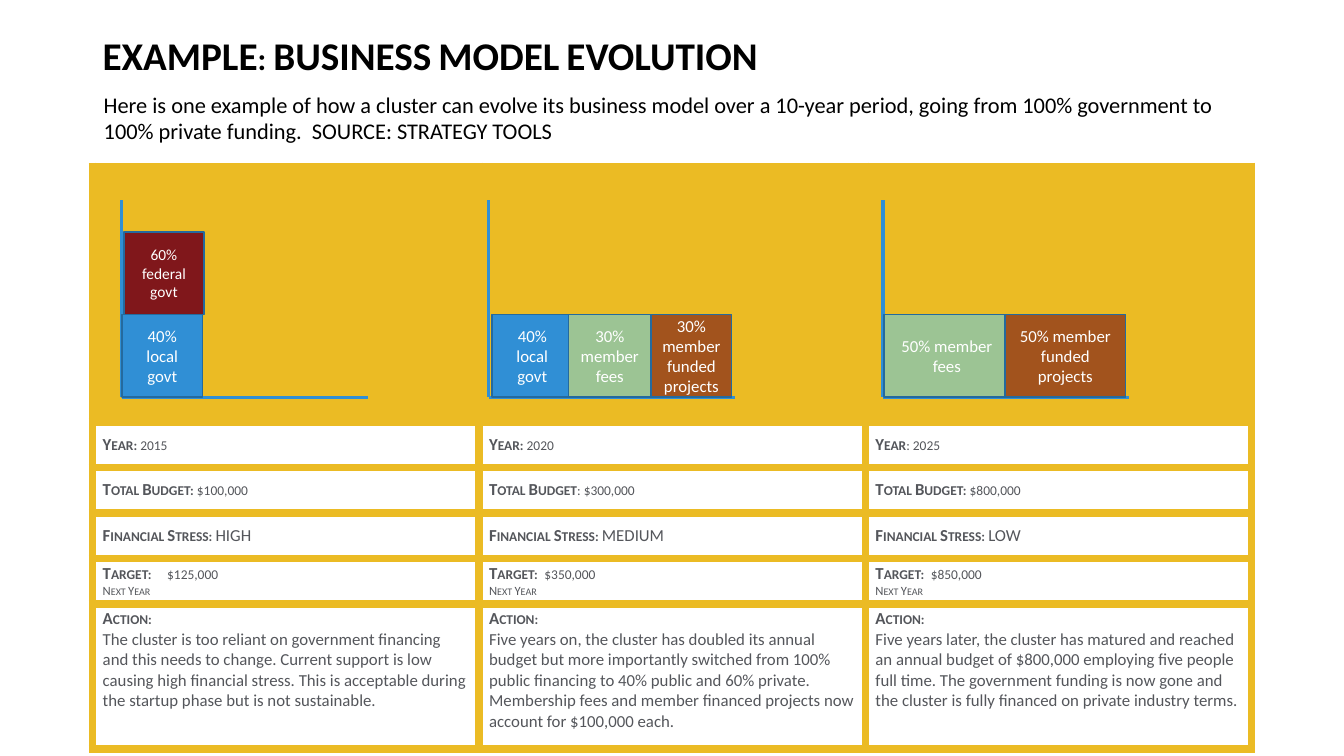
from lxml import etree
from pptx import Presentation
from pptx.dml.color import RGBColor
from pptx.enum.shapes import MSO_CONNECTOR, MSO_SHAPE
from pptx.enum.text import MSO_ANCHOR, PP_ALIGN
from pptx.oxml import parse_xml
from pptx.oxml.ns import nsdecls, qn
from pptx.util import Pt

STRAIGHT = MSO_CONNECTOR.STRAIGHT
RECTANGLE = MSO_SHAPE.RECTANGLE
MIDDLE, TOP = MSO_ANCHOR.MIDDLE, MSO_ANCHOR.TOP
CENTER = PP_ALIGN.CENTER

BLACK = RGBColor(0, 0, 0)
WHITE = RGBColor(0xFF, 0xFF, 0xFF)
GREY = RGBColor(0x54, 0x56, 0x5B)
GOLD = RGBColor(0xEB, 0xBB, 0x24)
BLUE = RGBColor(0x30, 0x8F, 0xD5)
DARK_BLUE = RGBColor(0x24, 0x6A, 0x9E)
RED = RGBColor(0x80, 0x17, 0x1B)
GREEN = RGBColor(0x9C, 0xC4, 0x94)
BROWN = RGBColor(0xA2, 0x53, 0x1D)


def add_run(paragraph, text, size, color, bold=False, small_caps=False):
    run = paragraph.add_run()
    run.text = text
    run.font.name = "Calibri"
    run.font.size = Pt(size)
    run.font.bold = bold
    run.font.color.rgb = color
    if small_caps:
        run.font._element.set("cap", "small")


def style_cell(cell, fill):
    properties = cell._tc.get_or_add_tcPr()
    for side in ("lnL", "lnR", "lnT", "lnB"):
        properties.append(parse_xml(
            f'<a:{side} {nsdecls("a")} w="{Pt(6)}"><a:solidFill>'
            f'<a:srgbClr val="{GOLD}"/></a:solidFill></a:{side}>'))
    cell.fill.solid()
    cell.fill.fore_color.rgb = fill


prs = Presentation()
prs.slide_width, prs.slide_height = Pt(960), Pt(540)
slide = prs.slides.add_slide(prs.slide_layouts[6])
shapes = slide.shapes

# Title and introduction
title = shapes.add_textbox(Pt(66.2), Pt(15.8), Pt(828), Pt(51)).text_frame
title.word_wrap = True
title.vertical_anchor = MIDDLE
title.paragraphs[0].line_spacing = 0.9
add_run(title.paragraphs[0], "EXAMPLE: BUSINESS MODEL EVOLUTION", 28, BLACK, True, True)

intro = shapes.add_textbox(Pt(67), Pt(61.2), Pt(827.3), Pt(46)).text_frame
intro.word_wrap = True
add_run(intro.paragraphs[0],
        "Here is one example of how a cluster can evolve its business model over a "
        "10-year period, going from 100% government to 100% private funding.  "
        "SOURCE: STRATEGY TOOLS", 16, BLACK)

# Table: one column per stage, under a row that holds the charts
facts = [
    [("Year: ", "2015"), ("Year: ", "2020"), ("Year", ": 2025")],
    [("Total Budget: ", "$100,000"), ("Total Budget", ": $300,000"),
     ("Total Budget: ", "$800,000")],
    [("Financial Stress: ", "HIGH"), ("Financial Stress: ", "MEDIUM"),
     ("Financial Stress: ", "LOW")],
    [("Target:\t", "$125,000"), ("Target:\t", "$350,000"), ("Target:\t", "$850,000")],
]
target_tabs = [46, 39.5, 39.5]
actions = [
    "The cluster is too reliant on government financing and this needs to change. "
    "Current support is low causing high financial stress. This is acceptable during "
    "the startup phase but is not sustainable.",
    "Five years on, the cluster has doubled its annual budget but more importantly "
    "switched from 100% public financing to 40% public and 60% private. Membership fees "
    "and member financed projects now account for $100,000 each.",
    "Five years later, the cluster has matured and reached an annual budget of $800,000 "
    "employing five people full time. The government funding is now gone and the cluster "
    "is fully financed on private industry terms.",
]
row_heights = [182.6] + [32.5] * len(facts) + [103.7]
stages = shapes.add_table(len(row_heights), 3, Pt(66.2), Pt(118.8),
                          Pt(828), Pt(sum(row_heights))).table
stages.first_row = stages.horz_banding = False
for row, height in zip(stages.rows, row_heights):
    row.height = Pt(height)

for col in range(3):
    stages.columns[col].width = Pt(276)
    style_cell(stages.cell(0, col), GOLD)

    for row, fact in enumerate(facts, start=1):
        cell = stages.cell(row, col)
        style_cell(cell, WHITE)
        cell.vertical_anchor = MIDDLE
        line = cell.text_frame.paragraphs[0]
        label, value = fact[col]
        if label.endswith("\t"):
            tabs = etree.SubElement(line._p.get_or_add_pPr(), qn("a:tabLst"))
            etree.SubElement(tabs, qn("a:tab"), pos=str(Pt(target_tabs[col])), algn="l")
            add_run(cell.text_frame.add_paragraph(), "Next Year", 9, GREY, small_caps=True)
        add_run(line, label, 12, GREY, True, True)
        add_run(line, value, 12, GREY, small_caps=True)

    action = stages.cell(len(facts) + 1, col)
    style_cell(action, WHITE)
    action.vertical_anchor = TOP
    add_run(action.text_frame.paragraphs[0], "Action:", 12, GREY, True, True)
    add_run(action.text_frame.add_paragraph(), actions[col], 12, GREY)

# Chart axes
axis_top, baseline, axis_length = 142.6, 283.7, 175.7
for axis_x in (87.1, 349.2, 630.7):
    for end_x, end_y in ((axis_x, axis_top), (axis_x + axis_length, baseline)):
        axis = shapes.add_connector(STRAIGHT, Pt(axis_x), Pt(baseline), Pt(end_x), Pt(end_y))
        axis.line.color.rgb = BLUE
        axis.line.width = Pt(2.25)
        etree.SubElement(axis._element.spPr, qn("a:effectLst"))

# Funding blocks: left, level above the baseline, width, fill, size, label
block_height = 59
blocks = [
    (87.1, 1, 57.6, BLUE, 12, "40% local govt"),
    (88.6, 2, 57, RED, 11, "60% federal govt"),
    (351.4, 1, 57.6, BLUE, 12, "40% local govt"),
    (406.1, 1, 59, GREEN, 12, "30% member fees"),
    (465.1, 1, 57.6, BROWN, 12, "30% member funded projects"),
    (631.4, 1, 90, GREEN, 12, "50% member fees"),
    (717.8, 1, 86.4, BROWN, 12, "50% member funded projects"),
]
for left, level, width, fill, size, label in blocks:
    block = shapes.add_shape(RECTANGLE, Pt(left), Pt(baseline - level * block_height),
                             Pt(width), Pt(block_height))
    block.shadow.inherit = False
    block.fill.solid()
    block.fill.fore_color.rgb = fill
    block.line.color.rgb = DARK_BLUE
    block.line.width = Pt(1)
    block.text_frame.word_wrap = True
    block.text_frame.vertical_anchor = MIDDLE
    block.text_frame.paragraphs[0].alignment = CENTER
    add_run(block.text_frame.paragraphs[0], label, size, WHITE)

prs.save("out.pptx")
